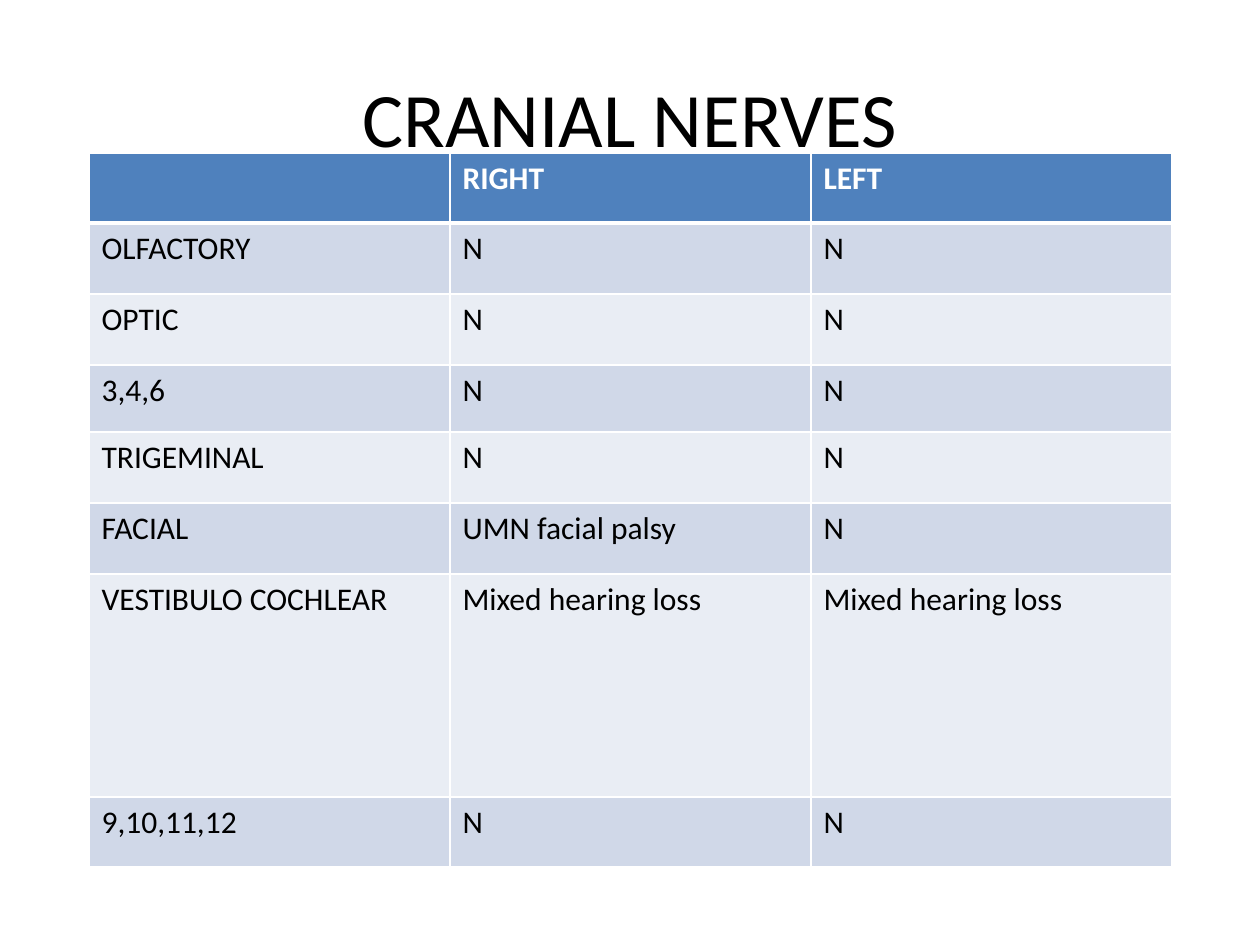
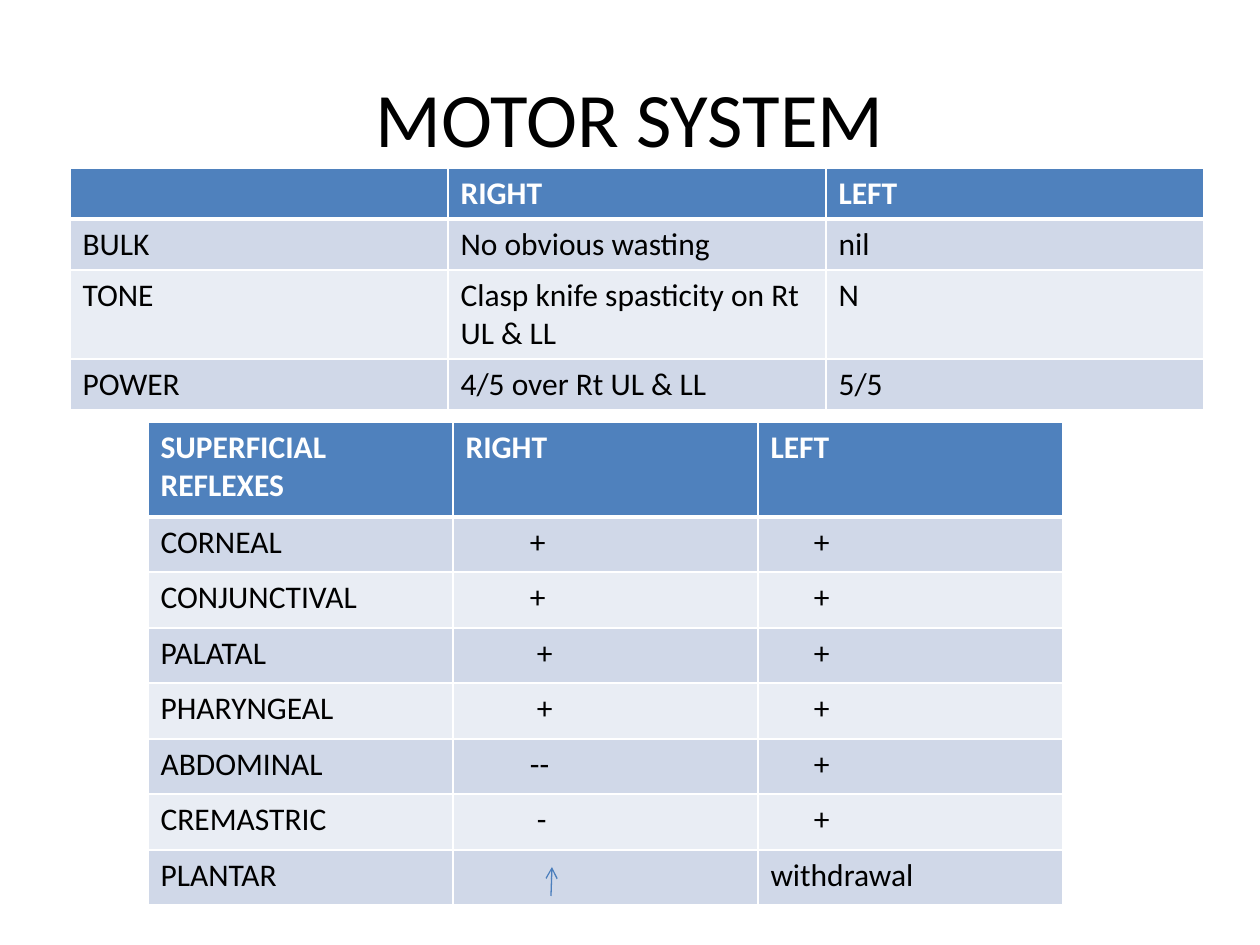
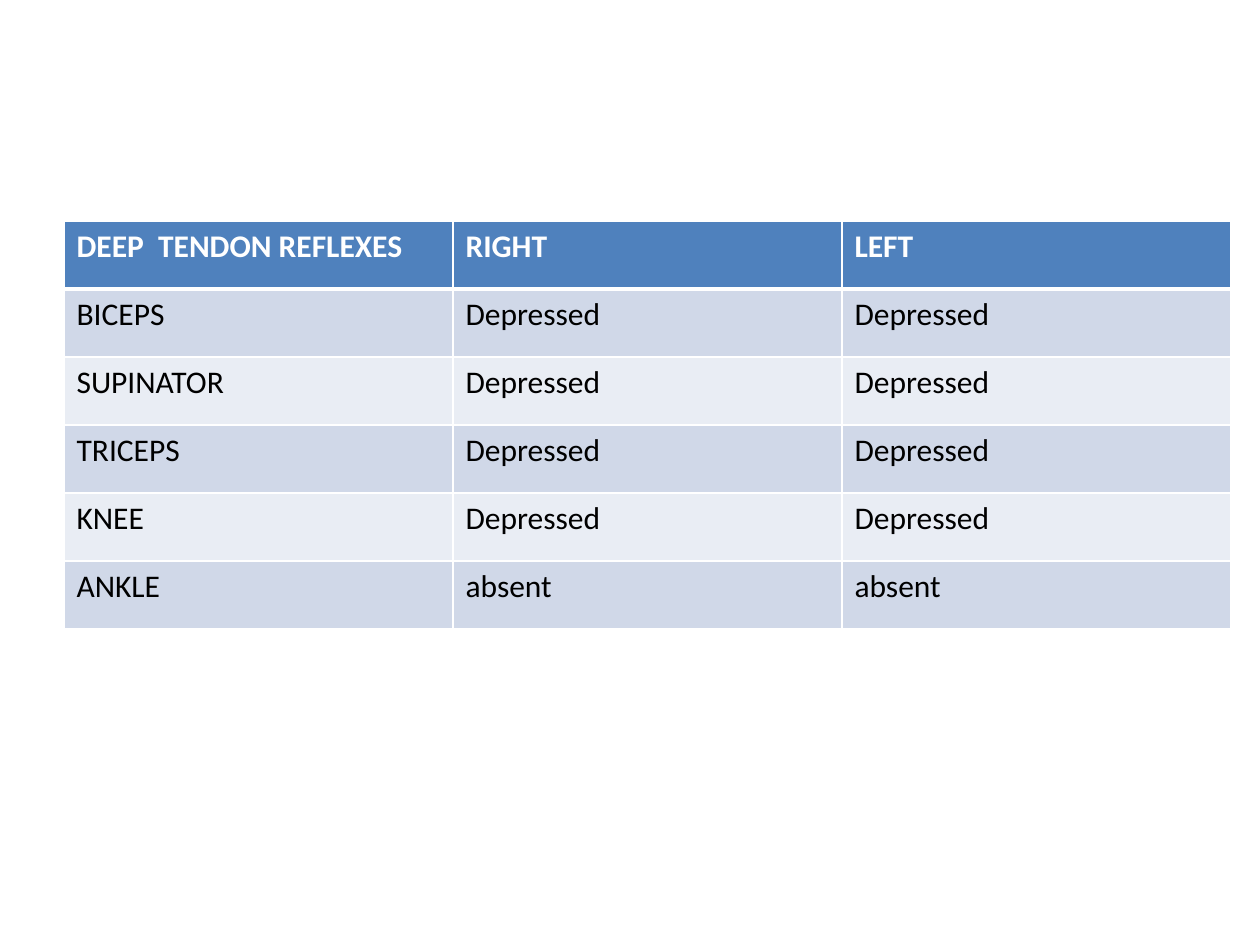
from lxml.etree import SubElement
from pptx import Presentation
from pptx.dml.color import RGBColor
from pptx.enum.shapes import MSO_CONNECTOR
from pptx.enum.text import MSO_ANCHOR, PP_ALIGN
from pptx.oxml.ns import qn
from pptx.util import Emu, Pt

PX = 914400 / 126
FONT = "Calibri"
COLORS = {
    "header": "4F81BD",
    "odd": "D0D8E8",
    "even": "E9EDF4",
    "border": "FFFFFF",
    "header text": "FFFFFF",
    "text": "000000",
    "arrow": "4B7EBC",
}
CELL_MARGIN = 13


def add_title(page, text):
    box = page.shapes.add_textbox(*[Emu(round(n * PX)) for n in (63, 38, 1134, 157)])
    frame = box.text_frame
    frame.word_wrap = True
    frame.vertical_anchor = MSO_ANCHOR.MIDDLE
    frame.text = text
    para = frame.paragraphs[0]
    para.alignment = PP_ALIGN.CENTER
    para.font.name = FONT
    para.font.size = Pt(44)
    para.font.color.rgb = RGBColor.from_string(COLORS["text"])


def add_banded_table(page, left, top, column_width, heights, rows):
    """Add a table with a header row, banded rows and white rules."""
    columns = len(rows[0])
    area = (left, top, column_width * columns, sum(heights))
    table = page.shapes.add_table(
        len(rows), columns, *[Emu(round(n * PX)) for n in area]
    ).table
    for column in table.columns:
        column.width = Emu(round(column_width * PX))
    for row, (height, texts) in enumerate(zip(heights, rows)):
        table.rows[row].height = Emu(round(height * PX))
        band = "header" if row == 0 else "odd" if row % 2 else "even"
        for column, text in enumerate(texts):
            cell = table.cell(row, column)
            properties = cell._tc.get_or_add_tcPr()
            for side in ("lnL", "lnR", "lnT", "lnB"):
                under_header = (row, side) in ((0, "lnB"), (1, "lnT"))
                line = SubElement(properties, qn(f"a:{side}"), w=str(Pt(3 if under_header else 1)))
                fill = SubElement(line, qn("a:solidFill"))
                SubElement(fill, qn("a:srgbClr"), val=COLORS["border"])
            cell.fill.solid()
            cell.fill.fore_color.rgb = RGBColor.from_string(COLORS[band])
            cell.text_frame.text = text
            font = cell.text_frame.paragraphs[0].font
            font.name = FONT
            font.size = Pt(18)
            font.bold = row == 0
            color = COLORS["header text" if row == 0 else "text"]
            font.color.rgb = RGBColor.from_string(color)
    return table


deck = Presentation()
deck.slide_width = Emu(round(1260 * PX))
deck.slide_height = Emu(round(945 * PX))
blank = deck.slide_layouts[6]

# Cranial nerves
page = deck.slides.add_slide(blank)
add_title(page, "CRANIAL NERVES")
add_banded_table(page, 89, 153, 361, [70, 71, 71, 67, 71, 71, 223, 70], [
    ("", "RIGHT", "LEFT"),
    ("OLFACTORY", "N", "N"),
    ("OPTIC", "N", "N"),
    ("3,4,6", "N", "N"),
    ("TRIGEMINAL", "N", "N"),
    ("FACIAL", "UMN facial palsy", "N"),
    ("VESTIBULO COCHLEAR", "Mixed hearing loss", "Mixed hearing loss"),
    ("9,10,11,12", "N", "N"),
])

# Motor system and superficial reflexes
page = deck.slides.add_slide(blank)
add_title(page, "MOTOR SYSTEM")
add_banded_table(page, 70, 168, 378, [51, 51, 89, 51], [
    ("", "RIGHT", "LEFT"),
    ("BULK", "No obvious wasting", "nil"),
    ("TONE", "Clasp knife spasticity on Rt UL & LL", "N"),
    ("POWER", "4/5 over Rt UL & LL", "5/5"),
])
reflexes = add_banded_table(page, 148, 422, 305, [95] + [55, 56] * 3 + [55], [
    ("SUPERFICIAL REFLEXES", "RIGHT", "LEFT"),
    ("CORNEAL", "+", "+"),
    ("CONJUNCTIVAL", "+", "+"),
    ("PALATAL", "+", "+"),
    ("PHARYNGEAL", "+", "+"),
    ("ABDOMINAL", "--", "+"),
    ("CREMASTRIC", "-", "+"),
    ("PLANTAR", "", "withdrawal"),
])
for row, right_indent in enumerate((64, 64, 71, 71, 64, 71), start=1):
    for column, indent in ((1, right_indent), (2, 43)):
        reflexes.cell(row, column).margin_left = Emu(round((CELL_MARGIN + indent) * PX))

plantar_arrow = page.shapes.add_connector(
    MSO_CONNECTOR.STRAIGHT, *[Emu(round(n * PX)) for n in (551, 896, 552, 867)]
)
plantar_arrow.line.width = Pt(0.75)
plantar_arrow.line.color.rgb = RGBColor.from_string(COLORS["arrow"])
SubElement(plantar_arrow.line._get_or_add_ln(), qn("a:tailEnd"), type="arrow")
SubElement(plantar_arrow._element.spPr, qn("a:effectLst"))

# Deep tendon reflexes
page = deck.slides.add_slide(blank)
add_banded_table(page, 64, 221, 389, [68] * 6, [
    ("DEEP  TENDON REFLEXES", "RIGHT", "LEFT"),
    ("BICEPS", "Depressed", "Depressed"),
    ("SUPINATOR", "Depressed", "Depressed"),
    ("TRICEPS", "Depressed", "Depressed"),
    ("KNEE", "Depressed", "Depressed"),
    ("ANKLE", "absent", "absent"),
])

deck.save("out.pptx")
